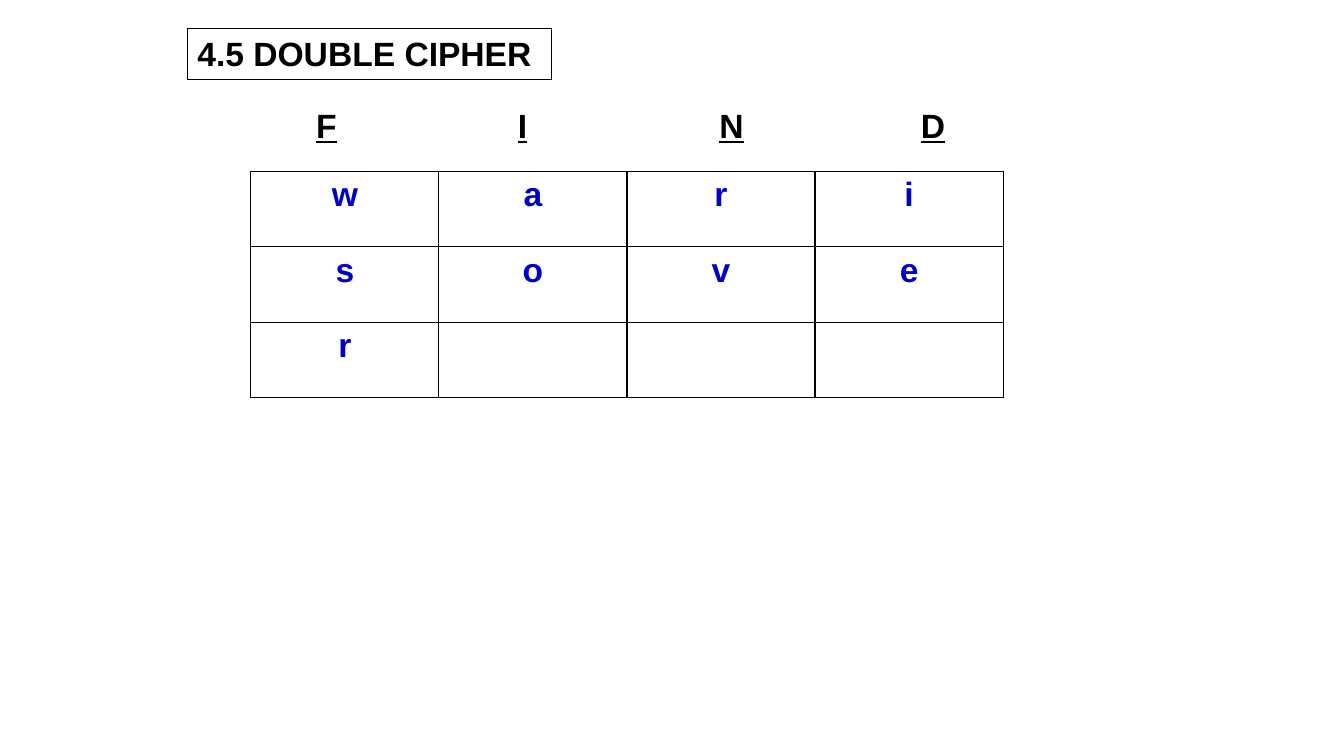
from dataclasses import dataclass

import pptx
import pptx.dml.color
import pptx.enum.text
import pptx.oxml
import pptx.oxml.ns
import pptx.util
from pptx.util import Cm

ALIGN = pptx.enum.text.PP_ALIGN
ANCHOR = pptx.enum.text.MSO_ANCHOR
AUTO_SIZE = pptx.enum.text.MSO_AUTO_SIZE


@dataclass(frozen=True)
class Theme:
    font: str = "Arial"
    size: float = 24
    ink: str = "000000"
    cipher: str = "0000CC"
    outline: float = 0.75
    grid: float = 1


THEME = Theme()
KEYWORD = "FIND"
CIPHER_ROWS = ["wari", "sove", "r"]


def rgb(value):
    return pptx.dml.color.RGBColor.from_string(value)


def add_text(paragraph, text, color=THEME.ink, underline=False, align=ALIGN.LEFT):
    paragraph.alignment = align
    run = paragraph.add_run()
    run.text = text
    run.font.name = THEME.font
    run.font.size = pptx.util.Pt(THEME.size)
    run.font.bold = True
    run.font.underline = underline
    run.font.color.rgb = rgb(color)


def place_heading(heading, text):
    heading.left, heading.top = Cm(4.72), Cm(0.71)
    heading.width, heading.height = Cm(9.19), Cm(1.3)
    heading.line.color.rgb = rgb(THEME.ink)
    heading.line.width = pptx.util.Pt(THEME.outline)
    frame = heading.text_frame
    frame.word_wrap = True
    frame.auto_size = AUTO_SIZE.NONE
    frame.vertical_anchor = ANCHOR.TOP
    add_text(frame.paragraphs[0], text)


def set_tab_stops(paragraph, count, gap):
    properties = paragraph._p.get_or_add_pPr()
    stops = pptx.oxml.parse_xml(f"<a:tabLst {pptx.oxml.ns.nsdecls('a')}/>")
    for number in range(1, count + 1):
        stops.append(pptx.oxml.parse_xml(
            f'<a:tab {pptx.oxml.ns.nsdecls("a")} pos="{gap * number}" algn="l"/>'))
    properties.append(stops)


def add_keyword(slide, keyword):
    box = slide.shapes.add_textbox(Cm(7.72), Cm(2.51), Cm(16.36), Cm(1.27))
    frame = box.text_frame
    frame.word_wrap = False
    frame.auto_size = AUTO_SIZE.SHAPE_TO_FIT_TEXT
    frame.vertical_anchor = ANCHOR.MIDDLE
    paragraph = frame.paragraphs[0]
    for position, letter in enumerate(keyword):
        if position:
            add_text(paragraph, "\t\t")
        add_text(paragraph, letter, underline=True)
    set_tab_stops(paragraph, 2 * (len(keyword) - 1), Cm(2.54))


def add_borders(cell):
    properties = cell._tc.get_or_add_tcPr()
    for index, side in enumerate(("lnL", "lnR", "lnT", "lnB")):
        properties.insert(index, pptx.oxml.parse_xml(
            f'<a:{side} {pptx.oxml.ns.nsdecls("a")} w="{pptx.util.Pt(THEME.grid)}">'
            f'<a:solidFill><a:srgbClr val="{THEME.ink}"/></a:solidFill></a:{side}>'))


def add_cipher_grid(slide, rows, column_count):
    column_width, row_height = Cm(4.74), Cm(1.9)
    grid = slide.shapes.add_table(
        len(rows), column_count, Cm(6.32), Cm(4.32),
        column_width * column_count, row_height * len(rows)).table
    grid.first_row = False
    grid.horz_banding = False
    for row, letters in enumerate(rows):
        for column in range(column_count):
            cell = grid.cell(row, column)
            cell.fill.background()
            add_borders(cell)
            if column < len(letters):
                add_text(cell.text_frame.paragraphs[0], letters[column],
                         color=THEME.cipher, align=ALIGN.CENTER)


def main():
    deck = pptx.Presentation()
    deck.slide_width, deck.slide_height = Cm(33.87), Cm(19.05)
    slide = deck.slides.add_slide(deck.slide_layouts.get_by_name("Title Only"))
    place_heading(slide.shapes.title, "4.5 DOUBLE CIPHER")
    add_keyword(slide, KEYWORD)
    add_cipher_grid(slide, CIPHER_ROWS, len(KEYWORD))
    deck.save("out.pptx")


if __name__ == "__main__":
    main()
